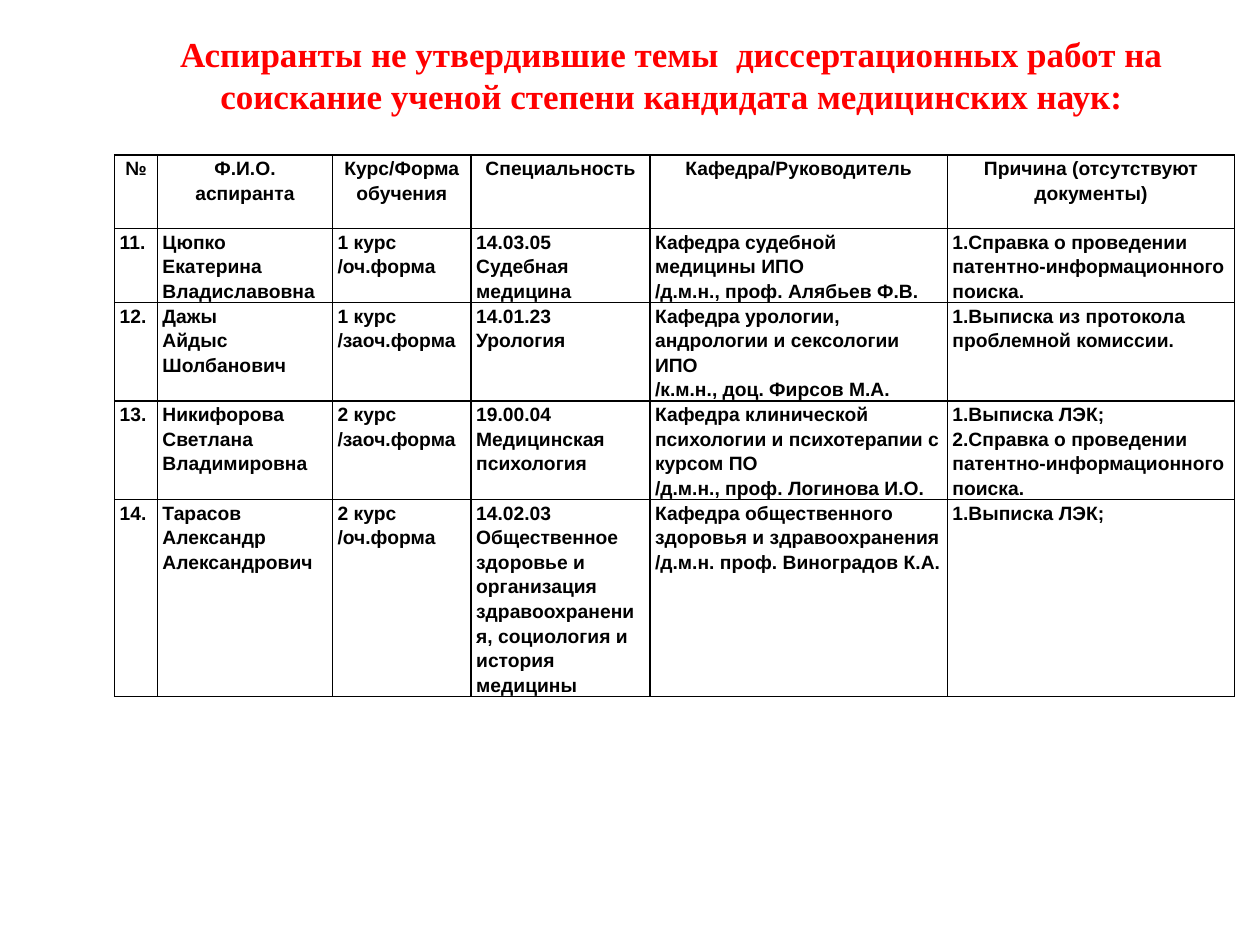
from lxml import etree
from pptx import Presentation
from pptx.dml.color import RGBColor
from pptx.enum.text import MSO_ANCHOR, PP_ALIGN
from pptx.oxml.ns import qn
from pptx.util import Inches, Pt

CENTER, LEFT = PP_ALIGN.CENTER, PP_ALIGN.LEFT
MIDDLE, TOP = MSO_ANCHOR.MIDDLE, MSO_ANCHOR.TOP
COLORS = {"title": "FF0000", "text": "000000", "line": "000000"}

TITLE = ("Аспиранты не утвердившие темы  диссертационных работ "
         "на соискание ученой степени кандидата медицинских наук:")
WIDTHS = [0.34, 1.39, 1.1, 1.42, 2.36, 2.28]
LINES = [3, 3, 4, 4, 8]  # text lines that each row holds
LINE = 0.195
ROWS = [
    ["№", "Ф.И.О. аспиранта", "Курс/Форма обучения", "Специальность",
     "Кафедра/Руководитель", "Причина (отсутствуют документы)"],
    ["11.", "Цюпко\nЕкатерина Владиславовна", "1 курс\n/оч.форма",
     "14.03.05\nСудебная медицина",
     "Кафедра судебной медицины ИПО\n/д.м.н., проф. Алябьев Ф.В.",
     "1.Справка о проведении патентно-информационного поиска."],
    ["12.", "Дажы\nАйдыс\nШолбанович", "1 курс\n/заоч.форма",
     "14.01.23\nУрология",
     "Кафедра урологии, андрологии и сексологии ИПО\n/к.м.н., доц. Фирсов М.А.",
     "1.Выписка из протокола проблемной комиссии."],
    ["13.", "Никифорова Светлана Владимировна", "2 курс\n/заоч.форма",
     "19.00.04 Медицинская психология",
     "Кафедра клинической психологии и психотерапии с курсом ПО\n"
     "/д.м.н., проф. Логинова И.О.",
     "1.Выписка ЛЭК;\n2.Справка о проведении патентно-информационного поиска."],
    ["14.", "Тарасов Александр Александрович", "2 курс\n/оч.форма",
     "14.02.03 Общественное здоровье и организация здравоохранения, "
     "социология и история медицины",
     "Кафедра общественного здоровья и здравоохранения\n"
     "/д.м.н. проф. Виноградов К.А.",
     "1.Выписка ЛЭК;"],
]


def style(frame, face, size, color, align, gap):
    for par in frame.paragraphs:
        par.alignment = align
        par.line_spacing = gap
        for run in par.runs:
            run.font.name = face
            run.font.size = Pt(size)
            run.font.bold = True
            run.font.color.rgb = RGBColor.from_string(color)


def add_title(slide, left, top, width, height):
    title = slide.shapes.title
    title.left, title.top = Inches(left), Inches(top)
    title.width, title.height = Inches(width), Inches(height)
    frame = title.text_frame
    frame.text = TITLE
    frame.word_wrap = True
    frame.vertical_anchor = MIDDLE
    style(frame, "Times New Roman", 20, COLORS["title"], CENTER, 1.0)


def add_edges(cell):
    props = cell._tc.get_or_add_tcPr()
    for side in ("lnL", "lnR", "lnT", "lnB"):
        edge = etree.SubElement(props, qn(f"a:{side}"), w=str(Pt(1)))
        fill = etree.SubElement(edge, qn("a:solidFill"))
        etree.SubElement(fill, qn("a:srgbClr"), val=COLORS["line"])


def fill_cell(cell, text, align):
    cell.margin_left = cell.margin_right = Inches(0.04)
    cell.margin_top = cell.margin_bottom = 0
    cell.vertical_anchor = TOP
    add_edges(cell)
    cell.fill.background()
    cell.text_frame.text = text
    style(cell.text_frame, "Arial", 11, COLORS["text"], align, 1.15)


def add_grid(slide, left, top, width, height):
    table = slide.shapes.add_table(
        len(ROWS), len(WIDTHS), Inches(left), Inches(top),
        Inches(width), Inches(height)).table
    table.first_row = table.horz_banding = False
    for col, share in zip(table.columns, WIDTHS):
        col.width = Inches(width * share / sum(WIDTHS))
    for r, (row, count) in enumerate(zip(ROWS, LINES)):
        table.rows[r].height = Inches(height * count / sum(LINES))
        for c, text in enumerate(row):
            fill_cell(table.cell(r, c), text, LEFT if r else CENTER)


def main():
    deck = Presentation()
    deck.slide_width, deck.slide_height = Inches(10), Inches(7.5)
    slide = deck.slides.add_slide(deck.slide_layouts[5])
    add_title(slide, 0.83, 0.21, 9, 0.77)
    add_grid(slide, 0.91, 1.23, sum(WIDTHS), LINE * sum(LINES))
    deck.save("out.pptx")


if __name__ == "__main__":
    main()
